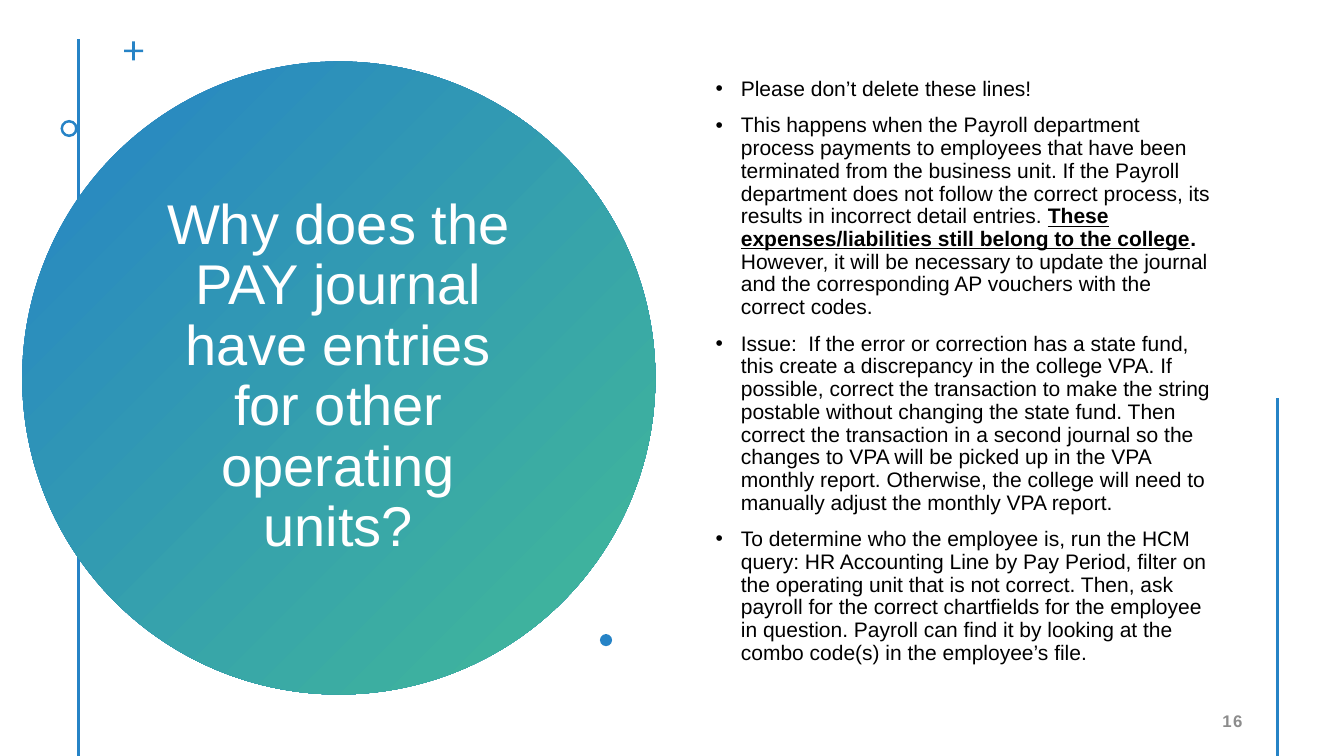
from lxml import etree
from pptx import Presentation
from pptx.dml.color import RGBColor
from pptx.enum.shapes import MSO_CONNECTOR, MSO_SHAPE
from pptx.enum.text import MSO_ANCHOR, PP_ALIGN
from pptx.oxml.ns import qn
from pptx.util import Inches, Pt

OVAL, RING, PLUS = MSO_SHAPE.OVAL, MSO_SHAPE.DONUT, MSO_SHAPE.CROSS
STRAIGHT = MSO_CONNECTOR.STRAIGHT
MIDDLE = MSO_ANCHOR.MIDDLE
LEFT, CENTER, RIGHT = PP_ALIGN.LEFT, PP_ALIGN.CENTER, PP_ALIGN.RIGHT
BLUE, GREEN, WHITE, BLACK, GRAY = "2683C6", "42BA97", "FFFFFF", "000000", "8C8C8C"

QUESTION = "Why does the PAY journal have entries for other operating units?"
ANSWERS = [
    [("Please don’t delete these lines!", False, False)],
    [("This happens when the Payroll department process payments to employees "
      "that have been terminated from the business unit. If the Payroll "
      "department does not follow the correct process, its results in "
      "incorrect detail entries. ", False, False),
     ("These expenses/liabilities still belong to the college", True, True),
     (". ", True, False),
     ("However, it will be necessary to update the journal and the "
      "corresponding AP vouchers with the correct codes.", False, False)],
    [("Issue:  If the error or correction has a state fund, this create a "
      "discrepancy in the college VPA. If possible, correct the transaction "
      "to make the string postable without changing the state fund. Then "
      "correct the transaction in a second journal so the changes to VPA will "
      "be picked up in the VPA monthly report. Otherwise, the college will "
      "need to manually adjust the monthly VPA report.", False, False)],
    [("To determine who the employee is, run the HCM query: HR Accounting Line "
      "by Pay Period, filter on the operating unit that is not correct. Then, "
      "ask payroll for the correct chartfields for the employee in question. "
      "Payroll can find it by looking at the combo code(s) in the employee’s "
      "file.", False, False)],
]


def color(hex_code):
    """Turn a hex string into a colour."""
    return RGBColor.from_string(hex_code)


class SlideBuilder:
    """Draws styled elements placed in percent of the slide's size."""

    font = "Arial"
    line_width = Pt(2)

    def __init__(self, deck):
        """Add a blank slide to the deck."""
        self.width, self.height = deck.slide_width, deck.slide_height
        self.shapes = deck.slides.add_slide(deck.slide_layouts[6]).shapes

    def place(self, x, y):
        """Turn a pair of percentages into lengths."""
        return int(self.width * x / 100), int(self.height * y / 100)

    def vertical_line(self, x, top):
        """Draw a line from a height down to the slide's bottom edge."""
        line = self.shapes.add_connector(
            STRAIGHT, *self.place(x, top), *self.place(x, 100))
        line.line.color.rgb = color(BLUE)
        line.line.width = self.line_width
        etree.SubElement(line._element.spPr, qn("a:effectLst"))

    def shape(self, preset, x, y, w, h, fills, adjustment=None):
        """Draw a borderless shape with one fill or a diagonal gradient."""
        shape = self.shapes.add_shape(preset, *self.place(x, y), *self.place(w, h))
        shape.shadow.inherit = False
        shape.line.fill.background()
        if adjustment is not None:
            shape.adjustments[0] = adjustment
        if len(fills) == 1:
            shape.fill.solid()
            shape.fill.fore_color.rgb = color(fills[0])
            return
        shape.fill.gradient()
        shape.fill.gradient_angle = 315
        for position, (stop, fill) in enumerate(zip(shape.fill.gradient_stops, fills)):
            stop.position = position
            stop.color.rgb = color(fill)

    def text(self, x, y, w, h, paragraphs, size, ink, align=LEFT,
             line_spacing=1.0, bullets=False, tracking=0):
        """Write paragraphs of (words, bold, underline) runs."""
        frame = self.shapes.add_textbox(
            *self.place(x, y), *self.place(w, h)).text_frame
        frame.word_wrap = True
        frame.vertical_anchor = MIDDLE
        for index, runs in enumerate(paragraphs):
            paragraph = frame.add_paragraph() if index else frame.paragraphs[0]
            paragraph.alignment = align
            paragraph.line_spacing = line_spacing
            if bullets:
                self.bullet(paragraph)
            for words, bold, underline in runs:
                run = paragraph.add_run()
                run.text = words
                run.font.name = self.font
                run.font.size = Pt(size)
                run.font.bold = bold
                run.font.underline = underline
                run.font.color.rgb = color(ink)
                if tracking:
                    run.font._element.set("spc", str(tracking * 100))

    def bullet(self, paragraph):
        """Give a paragraph a hanging bullet and space above."""
        paragraph.space_before = Pt(10)
        properties = paragraph._p.get_or_add_pPr()
        indent = Inches(0.25)
        properties.set("marL", str(indent))
        properties.set("indent", str(-indent))
        etree.SubElement(properties, qn("a:buFont"), typeface=self.font)
        etree.SubElement(properties, qn("a:buChar"), char="•")


def main():
    """Build and save the slide."""
    deck = Presentation()
    deck.slide_width, deck.slide_height = Inches(13.33), Inches(7.5)
    page = SlideBuilder(deck)

    page.vertical_line(5.85, 5.2)
    page.shape(OVAL, 1.65, 8.13, 47.11, 83.73, [BLUE, GREEN])
    page.shape(PLUS, 9.23, 5.47, 1.43, 2.53, [BLUE], 0.43)
    page.shape(RING, 4.5, 15.87, 1.28, 2.27, [BLUE], 0.15)
    page.shape(OVAL, 44.64, 83.87, 0.9, 1.6, [BLUE])
    page.vertical_line(95.05, 52.67)

    page.text(52.51, 5.6, 38.41, 87.07, ANSWERS, 15, BLACK,
              line_spacing=0.9, bullets=True)
    page.text(10.2, 18.8, 29.93, 62.27, [[(QUESTION, False, False)]], 40, WHITE,
              align=CENTER, line_spacing=0.9)
    page.text(70.67, 92.67, 22.51, 5.33, [[("16", True, False)]], 12, GRAY,
              align=RIGHT, tracking=1)
    deck.save("out.pptx")


if __name__ == "__main__":
    main()
